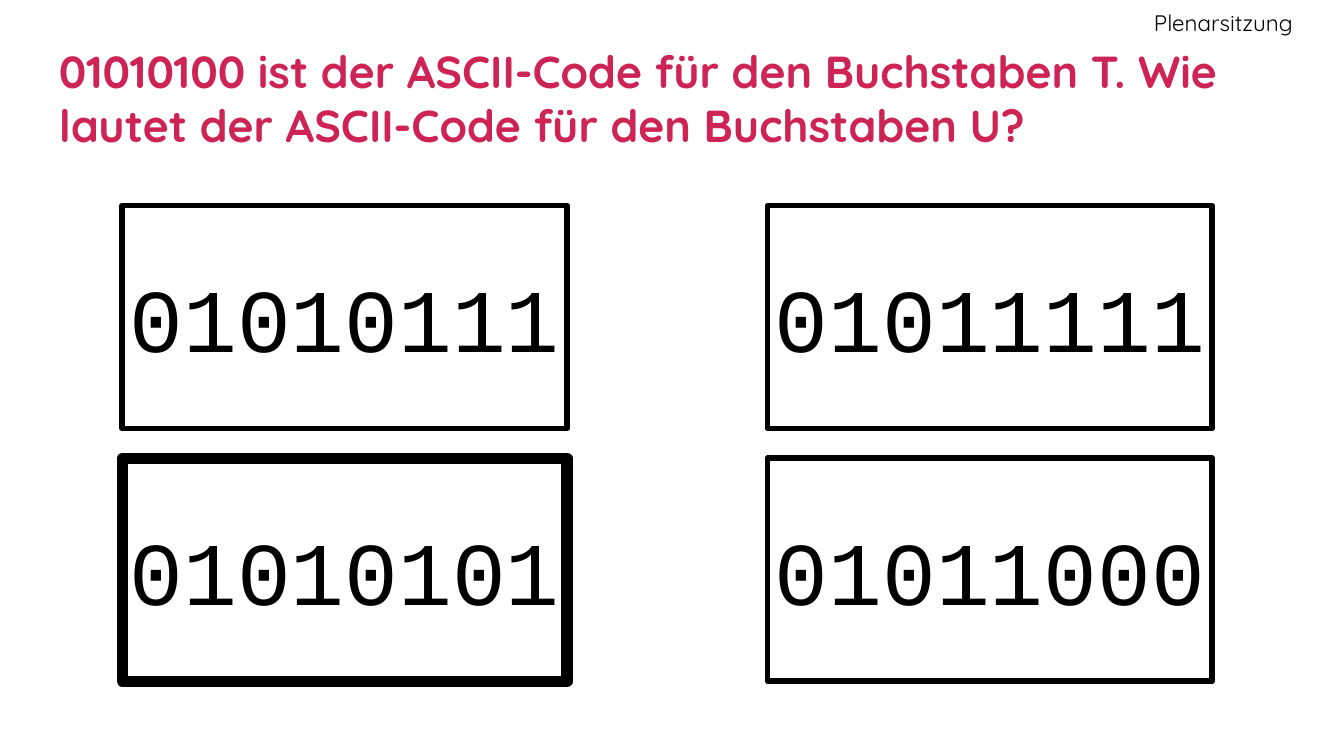
from dataclasses import dataclass

from pptx import Presentation
from pptx.dml.color import RGBColor
from pptx.enum.shapes import MSO_SHAPE
from pptx.enum.text import MSO_ANCHOR, PP_ALIGN
from pptx.util import Inches, Pt

RECT = MSO_SHAPE.RECTANGLE
MIDDLE = MSO_ANCHOR.MIDDLE
LEFT, CENTER, RIGHT = PP_ALIGN.LEFT, PP_ALIGN.CENTER, PP_ALIGN.RIGHT

BLACK, WHITE, PINK = "000000", "FFFFFF", "CD2355"
SANS, MONO = "Quicksand", "Courier New"

# Answer grid, in inches
GRID_LEFT, GRID_TOP = 0.91, 1.53
STEP_X, STEP_Y = 4.8, 1.88
CARD_W, CARD_H = 3.31, 1.66


@dataclass
class Answer:
    code: str
    correct: bool = False


ANSWERS = [
    Answer("01010111"),
    Answer("01011111"),
    Answer("01010101", correct=True),
    Answer("01011000"),
]


def rgb(value: str) -> RGBColor:
    return RGBColor.from_string(value)


def set_text(sp, text: str, *, size: float, font: str = SANS,
             color: str = BLACK, bold: bool = False, align=LEFT,
             inset: float = 0.1, right_inset: float = 0.1) -> None:
    tf = sp.text_frame
    tf.word_wrap = True
    tf.vertical_anchor = MIDDLE
    tf.margin_left = tf.margin_top = tf.margin_bottom = Inches(inset)
    tf.margin_right = Inches(right_inset)
    p = tf.paragraphs[0]
    p.alignment = align
    r = p.add_run()
    r.text = text
    r.font.name = font
    r.font.size = Pt(size)
    r.font.bold = bold
    r.font.color.rgb = rgb(color)


def add_label(s, left: float, top: float, width: float, height: float,
              text: str, **fmt) -> None:
    sp = s.shapes.add_textbox(Inches(left), Inches(top),
                              Inches(width), Inches(height))
    set_text(sp, text, **fmt)


def add_answer(s, answer: Answer, left: float, top: float) -> None:
    sp = s.shapes.add_shape(RECT, Inches(left), Inches(top),
                            Inches(CARD_W), Inches(CARD_H))
    sp.shadow.inherit = False
    sp.fill.solid()
    sp.fill.fore_color.rgb = rgb(WHITE)
    sp.line.color.rgb = rgb(BLACK)
    sp.line.width = Pt(6 if answer.correct else 3)
    set_text(sp, answer.code, size=48, font=MONO, align=CENTER,
             inset=0.05, right_inset=0.05)


def main() -> None:
    prs = Presentation()
    # 16:9 slide
    prs.slide_width = Inches(10)
    prs.slide_height = Inches(10 * 9 / 16)
    s = prs.slides.add_slide(prs.slide_layouts[6])

    # Question and section label
    add_label(s, 0.34, 0.34, 9.32, 0.77,
              "01010100 ist der ASCII-Code für den Buchstaben T. "
              "Wie lautet der ASCII-Code für den Buchstaben U?",
              size=24, color=PINK, bold=True)
    add_label(s, 7.48, 0, 2.14, 0.34, "Plenarsitzung",
              size=12, align=RIGHT, right_inset=0)

    # Answers in two columns, the correct one with a heavy frame
    for i, answer in enumerate(ANSWERS):
        row, col = divmod(i, 2)
        add_answer(s, answer, GRID_LEFT + col * STEP_X,
                   GRID_TOP + row * STEP_Y)

    prs.save("out.pptx")


if __name__ == "__main__":
    main()
